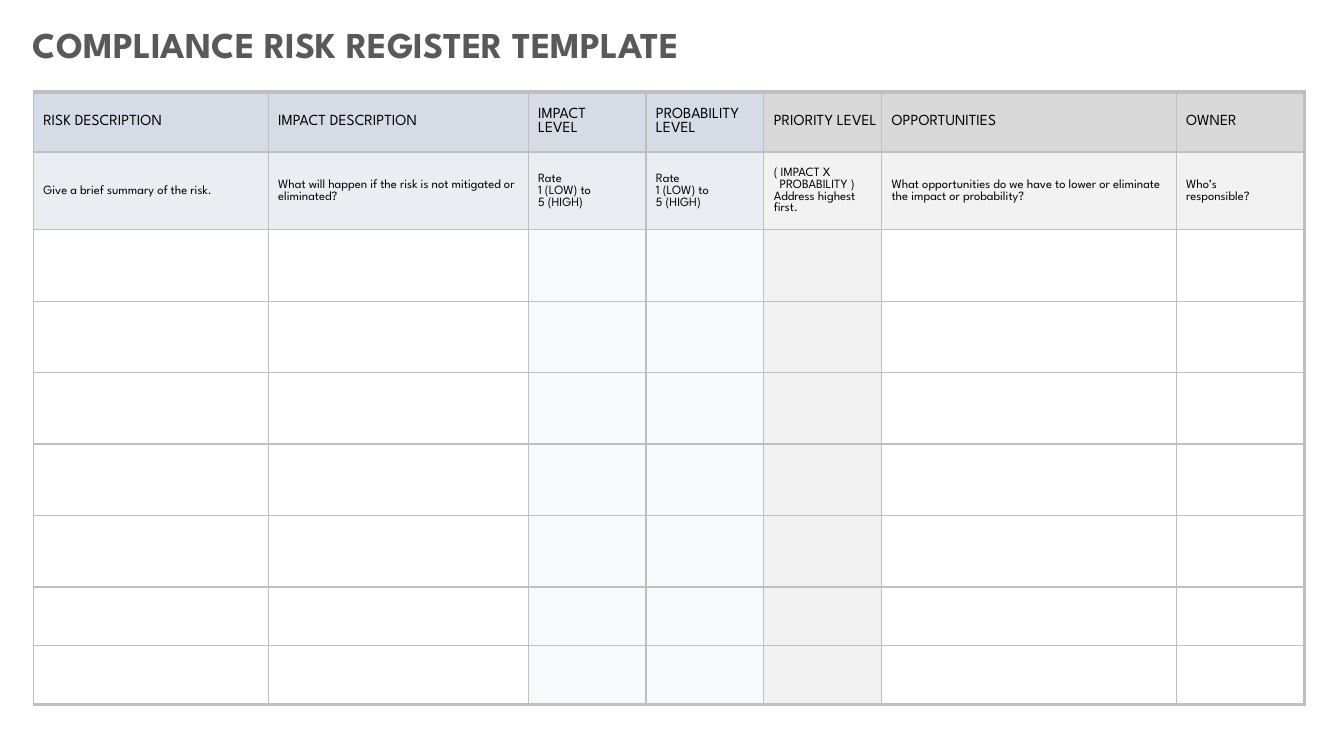
from dataclasses import dataclass

from lxml import etree
from pptx import Presentation
from pptx.dml.color import RGBColor
from pptx.enum.text import MSO_ANCHOR
from pptx.oxml.ns import qn
from pptx.util import Cm, Pt

MIDDLE = MSO_ANCHOR.MIDDLE


@dataclass(frozen=True)
class Theme:
    font: str = "League Spartan"
    title: str = "595959"
    text: str = "000000"
    border: str = "BFBFBF"
    blue_header: str = "D6DCE5"
    blue_guide: str = "EAEEF3"
    blue_entry: str = "F7F9FB"
    gray_header: str = "D9D9D9"
    gray_guide: str = "F2F2F2"
    white: str = "FFFFFF"
    title_size: float = 26
    header_size: float = 11
    guide_size: float = 9
    thin: float = 1
    edge: float = 2.25
    top_edge: float = 3


THEME = Theme()

RATING = "Rate \v1 (LOW) to \v5 (HIGH)"
BLUE = (THEME.blue_header, THEME.blue_guide)
GRAY = (THEME.gray_header, THEME.gray_guide)
COLUMNS = [
    (5.92, "RISK DESCRIPTION", "Give a brief summary of the risk.", *BLUE, THEME.white),
    (6.55, "IMPACT DESCRIPTION",
     "What will happen if the risk is not mitigated or eliminated?", *BLUE, THEME.white),
    (2.97, "IMPACT \vLEVEL", RATING, *BLUE, THEME.blue_entry),
    (2.97, "PROBABILITY LEVEL", RATING, *BLUE, THEME.blue_entry),
    (2.97, "PRIORITY LEVEL", "( IMPACT X\nPROBABILITY )\nAddress highest\vfirst.",
     *GRAY, THEME.gray_guide),
    (7.42, "OPPORTUNITIES",
     "What opportunities do we have to lower or eliminate the impact or probability?",
     *GRAY, THEME.white),
    (3.23, "OWNER", "Who’s\nresponsible?", *GRAY, THEME.white),
]
ROW_HEIGHTS = [1.52, 1.96] + [1.8] * 5 + [1.48] * 2
PRIORITY_COLUMN = 4


def set_all(target, values):
    for name, value in values.items():
        setattr(target, name, value)


def style_text(frame, size, color, bold=False):
    for paragraph in frame.paragraphs:
        set_all(paragraph.font, {"name": THEME.font, "size": Pt(size), "bold": bold})
        paragraph.font.color.rgb = RGBColor.from_string(color)


def add_title(slide, text):
    title = slide.shapes.add_textbox(Cm(0.58), Cm(0.43), Cm(22), Cm(1.37))
    title.text_frame.word_wrap = True
    title.text_frame.text = text
    style_text(title.text_frame, THEME.title_size, THEME.title, bold=True)


def set_borders(cell, widths):
    properties = cell._tc.get_or_add_tcPr()
    for side, width in widths.items():
        line = etree.SubElement(properties, qn(f"a:ln{side}"), w=str(Pt(width)))
        fill = etree.SubElement(line, qn("a:solidFill"))
        etree.SubElement(fill, qn("a:srgbClr"), val=THEME.border)


def style_cell(cell, fill, widths):
    set_all(cell, {
        "vertical_anchor": MIDDLE,
        "margin_left": Cm(0.25),
        "margin_right": Cm(0.02),
        "margin_top": Cm(0.02),
        "margin_bottom": Cm(0),
    })
    set_borders(cell, widths)
    cell.fill.solid()
    cell.fill.fore_color.rgb = RGBColor.from_string(fill)


def add_register(slide):
    row_count, column_count = len(ROW_HEIGHTS), len(COLUMNS)
    total_width = sum(column[0] for column in COLUMNS)
    register = slide.shapes.add_table(
        row_count, column_count, Cm(0.84), Cm(2.31), Cm(total_width), Cm(sum(ROW_HEIGHTS))
    ).table
    set_all(register, {"first_row": False, "horz_banding": False})
    for row, height in zip(register.rows, ROW_HEIGHTS):
        row.height = Cm(height)

    for c, (width, heading, guide, heading_fill, guide_fill, entry_fill) in enumerate(COLUMNS):
        register.columns[c].width = Cm(width)
        fills = [heading_fill, guide_fill] + [entry_fill] * (row_count - 2)
        for r, fill in enumerate(fills):
            style_cell(register.cell(r, c), fill, {
                "L": THEME.thin,
                "R": THEME.edge if c == column_count - 1 else THEME.thin,
                "T": THEME.top_edge if r == 0 else THEME.thin,
                "B": THEME.edge if r == row_count - 1 else THEME.thin,
            })
        for r, (text, size) in enumerate(
            [(heading, THEME.header_size), (guide, THEME.guide_size)]
        ):
            frame = register.cell(r, c).text_frame
            frame.text = text
            style_text(frame, size, THEME.text)

    formula_end = register.cell(1, PRIORITY_COLUMN).text_frame.paragraphs[1]
    formula_end._p.get_or_add_pPr().set("marL", str(Cm(0.15)))


def main():
    deck = Presentation()
    set_all(deck, {"slide_width": Cm(33.87), "slide_height": Cm(19.05)})
    slide = deck.slides.add_slide(deck.slide_layouts[6])
    add_title(slide, "COMPLIANCE RISK REGISTER TEMPLATE")
    add_register(slide)
    deck.save("out.pptx")


if __name__ == "__main__":
    main()
